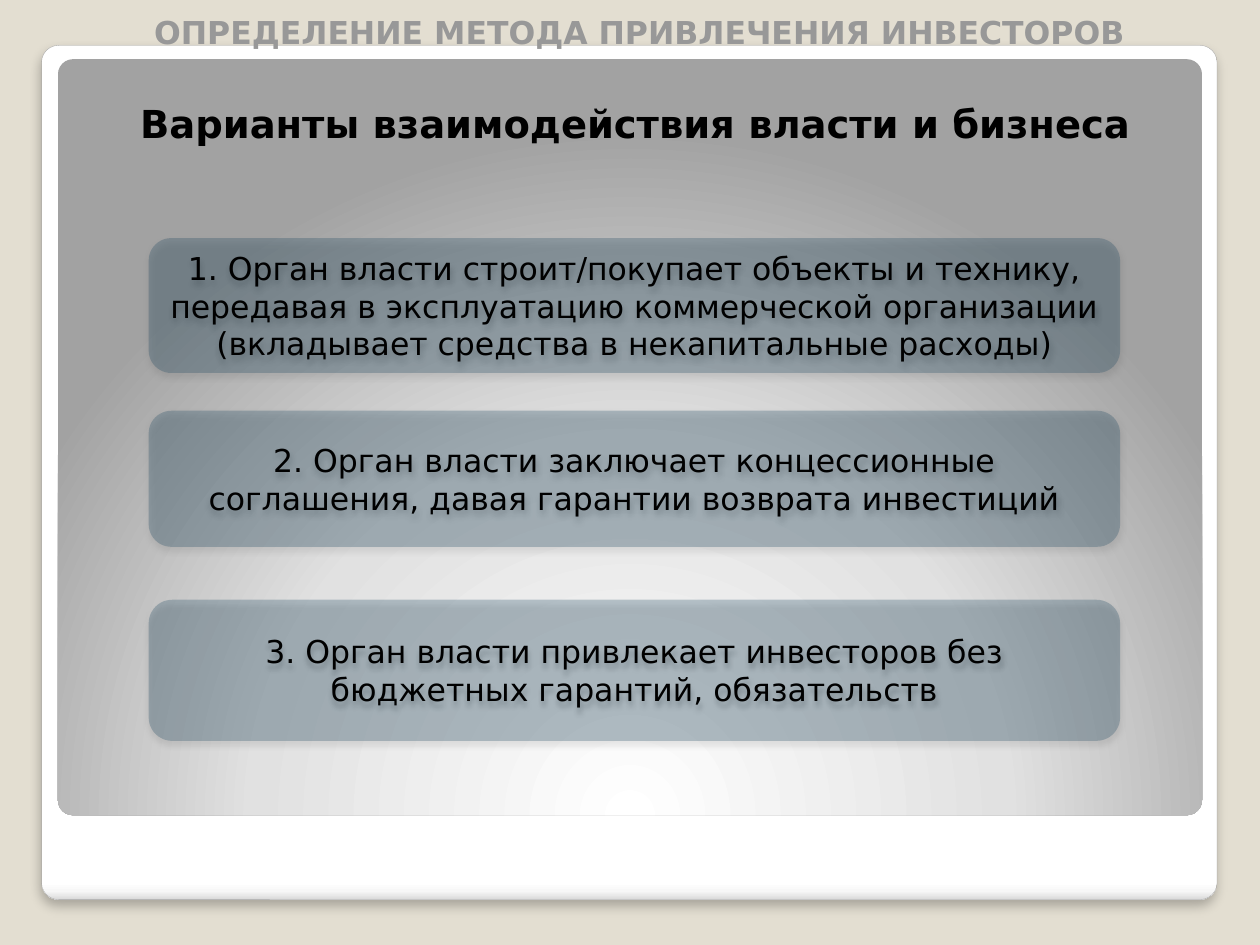
import lxml.etree
import pptx
import pptx.dml.color
import pptx.enum.shapes
import pptx.enum.text
import pptx.oxml
import pptx.oxml.ns
import pptx.util

Inches, Pt = pptx.util.Inches, pptx.util.Pt
RGBColor = pptx.dml.color.RGBColor
MIDDLE = pptx.enum.text.MSO_ANCHOR.MIDDLE
TOP = pptx.enum.text.MSO_ANCHOR.TOP

SAND = RGBColor(0xE3, 0xDE, 0xD1)
GRAY = RGBColor(0x98, 0x98, 0x98)
EDGE = RGBColor(0xA4, 0xA4, 0xA4)
NAVY = RGBColor(0x14, 0x42, 0x5D)
BLACK = RGBColor(0, 0, 0)
FONT = "DejaVu Sans"

FRAME_STOPS = [(0, "FFFFFF"), (98, "FFFFFF"), (99, "F7F7F7"), (100, "DADADA")]
FRAME_DIRECTION = '<a:lin ang="5400000" scaled="0"/>'
PANEL_STOPS = [(0, "FFFFFF"), (55, "E1E1E1"), (100, "A2A2A2")]
PANEL_DIRECTION = (
    '<a:path path="circle">'
    '<a:fillToRect l="50000" t="175000" r="50000" b="-75000"/></a:path>'
)

CARDS = [
    (1.89, 1.07, "1. Орган власти строит/покупает объекты и технику, передавая "
     "в эксплуатацию коммерческой организации (вкладывает средства "
     "в некапитальные расходы)"),
    (3.26, 1.08, "2. Орган власти заключает концессионные соглашения, "
     "давая гарантии возврата инвестиций"),
    (4.76, 1.12, "3. Орган власти привлекает инвесторов без бюджетных "
     "гарантий, обязательств"),
]


def add_rounded(left, top, width, height, shadow=None):
    """Add an unfilled rounded box; shadow is opacity %, blur and distance in points."""
    box = page.shapes.add_shape(
        pptx.enum.shapes.MSO_SHAPE.ROUNDED_RECTANGLE,
        Inches(left), Inches(top), Inches(width), Inches(height))
    box.fill.background()
    box.line.fill.background()
    box.shadow.inherit = False
    if shadow:
        opacity, blur, distance = shadow
        effects = box.element.spPr.find(pptx.oxml.ns.qn("a:effectLst"))
        effects.append(pptx.oxml.parse_xml(
            f'<a:outerShdw {pptx.oxml.ns.nsdecls("a")} blurRad="{Pt(blur)}" '
            f'dist="{Pt(distance)}" dir="5400000" rotWithShape="0">'
            f'<a:srgbClr val="000000"><a:alpha val="{opacity * 1000}"/></a:srgbClr>'
            '</a:outerShdw>'))
    return box


def write_text(box, text, anchor, **font_values):
    frame = box.text_frame
    frame.word_wrap = True
    frame.auto_size = pptx.enum.text.MSO_AUTO_SIZE.NONE
    frame.vertical_anchor = anchor
    para = frame.paragraphs[0]
    para.alignment = pptx.enum.text.PP_ALIGN.CENTER
    span = para.add_run()
    span.text = text
    color = font_values.pop("color", BLACK)
    for name, value in {"name": FONT, **font_values}.items():
        setattr(span.font, name, value)
    span.font.color.rgb = color


deck = pptx.Presentation()
deck.slide_width, deck.slide_height = Inches(10), Inches(7.5)
page = deck.slides.add_slide(deck.slide_layouts[5])
page.background.fill.solid()
page.background.fill.fore_color.rgb = SAND

# White frame and the gray panel inside it
frame_box = add_rounded(0.33, 0.36, 9.33, 6.78, shadow=(25, 6, 4))
frame_box.line.color.rgb = EDGE
frame_box.line.width = Pt(0.16)
panel = add_rounded(0.46, 0.47, 9.08, 6)
for box, stops, direction in [(frame_box, FRAME_STOPS, FRAME_DIRECTION),
                              (panel, PANEL_STOPS, PANEL_DIRECTION)]:
    box.adjustments[0] = 0.02
    stop_xml = "".join(
        f'<a:gs pos="{position * 1000}"><a:srgbClr val="{color}"/></a:gs>'
        for position, color in stops)
    properties = box.element.spPr
    properties.replace(
        properties.find(pptx.oxml.ns.qn("a:noFill")),
        pptx.oxml.parse_xml(
            f'<a:gradFill {pptx.oxml.ns.nsdecls("a")} rotWithShape="1">'
            f'<a:gsLst>{stop_xml}</a:gsLst>{direction}</a:gradFill>'))

# Title, brought in front of the frame
title = page.shapes.title
panel.element.addnext(title.element)
title_place = {"left": 0.55, "top": 0, "width": 8.95, "height": 0.54}
for name, value in title_place.items():
    setattr(title, name, Inches(value))
title_margins = {"margin_left": 0.2, "margin_top": 0.1,
                 "margin_right": 0.1, "margin_bottom": 0.05}
for name, value in title_margins.items():
    setattr(title.text_frame, name, Inches(value))
write_text(title, "ОПРЕДЕЛЕНИЕ МЕТОДА ПРИВЛЕЧЕНИЯ ИНВЕСТОРОВ", TOP,
           size=Pt(18), bold=True, color=GRAY)
title.text_frame.paragraphs[0].space_before = Pt(2.5)

# Translucent option cards
for top, height, text in CARDS:
    card = add_rounded(1.18, top, 7.71, height, shadow=(32, 3.5, 2.2))
    card.fill.solid()
    card.fill.fore_color.rgb = NAVY
    fill_color = card.element.spPr.find(
        pptx.oxml.ns.qn("a:solidFill")).find(pptx.oxml.ns.qn("a:srgbClr"))
    lxml.etree.SubElement(fill_color, pptx.oxml.ns.qn("a:alpha"), val="26000")
    write_text(card, text, MIDDLE, size=Pt(18))

heading = add_rounded(0.95, 0.71, 8.18, 0.53)
write_text(heading, "Варианты взаимодействия власти и бизнеса", MIDDLE,
           size=Pt(22), bold=True)

deck.save("out.pptx")
